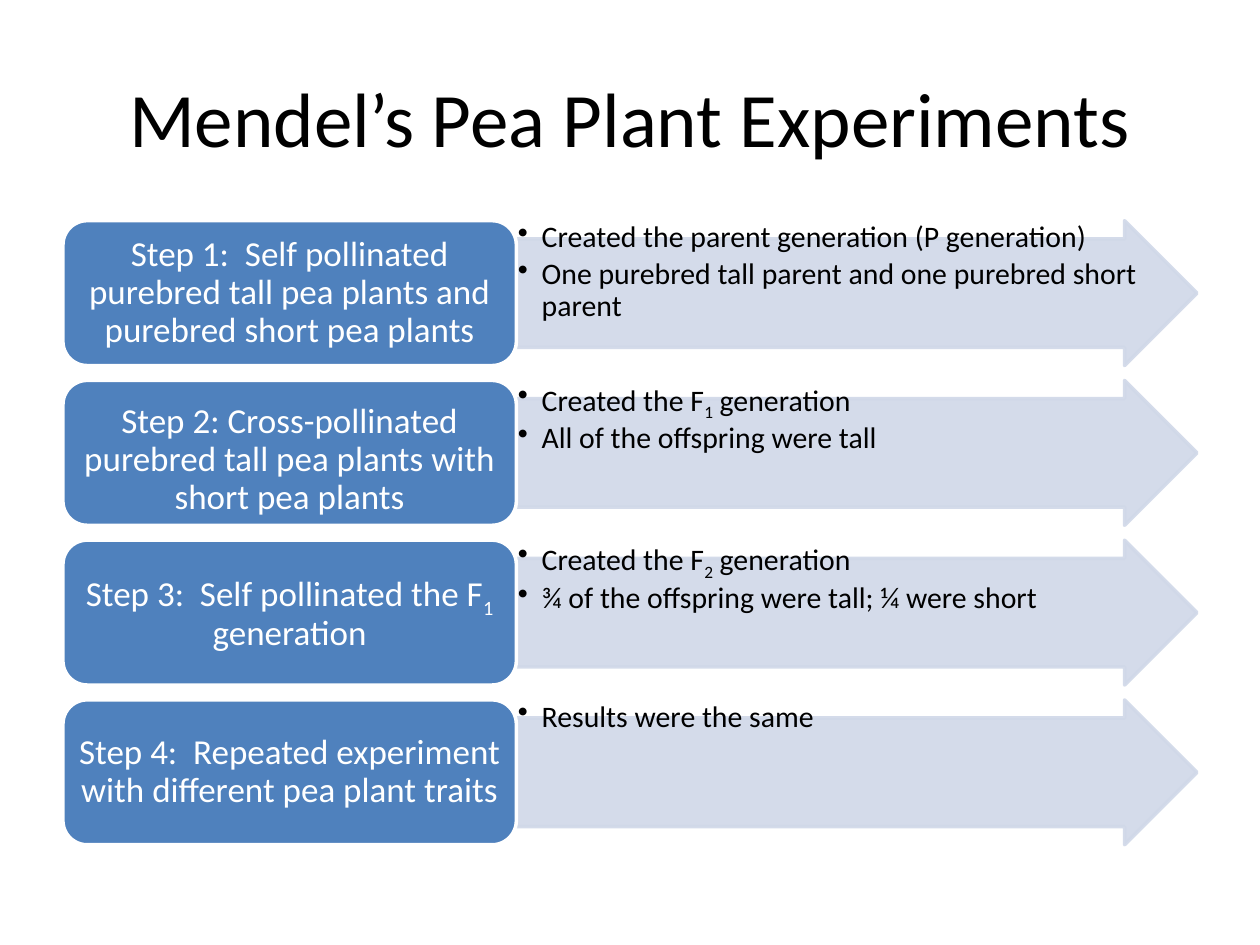
import lxml.etree
import pptx
import pptx.dml.color
import pptx.enum.shapes
import pptx.enum.text
import pptx.oxml.ns
import pptx.util

Cm = pptx.util.Cm
Pt = pptx.util.Pt
qn = pptx.oxml.ns.qn
SHAPE = pptx.enum.shapes.MSO_SHAPE
ALIGN = pptx.enum.text.PP_ALIGN
ANCHOR = pptx.enum.text.MSO_ANCHOR


def paint(target, colour, alpha=None):
    target.solid()
    target.fore_color.rgb = pptx.dml.color.RGBColor.from_string(colour)
    if alpha is not None:
        for element in target._xPr.iter(qn("a:srgbClr")):
            if element.find(qn("a:alpha")) is None:
                lxml.etree.SubElement(element, qn("a:alpha"), val=str(alpha * 1000))


class StepPage:
    font = "Calibri"
    black, white = "000000", "FFFFFF"
    step_fill, arrow_fill = "4F81BD", "D0D8E8"

    def __init__(self, page):
        self.page = page

    def shape(self, kind, place, fill, line, alpha=None):
        shape = self.page.shapes.add_shape(kind, *place)
        shape.shadow.inherit = False
        shape.line.width = Pt(2)
        paint(shape.line.fill, line, alpha)
        paint(shape.fill, fill, alpha)
        return shape

    def put_text(self, frame, texts, size, colour, align, after=0, spacing=1, bullet=False):
        frame.word_wrap = True
        for index, text in enumerate(texts):
            para = frame.paragraphs[0] if index == 0 else frame.add_paragraph()
            if bullet:
                self.bullet(para)
            para.alignment = align
            para.line_spacing = spacing
            para.space_after = Pt(after)
            para.font.name = self.font
            para.font.size = Pt(size)
            paint(para.font.fill, colour)
            for position, part in enumerate(text.split("_")):
                span = para.add_run()
                span.text = part
                if position % 2:
                    span.font._element.set("baseline", "-25000")

    def bullet(self, para):
        properties = para._p.get_or_add_pPr()
        properties.set("marL", str(Cm(0.48)))
        properties.set("indent", str(Cm(-0.48)))
        lxml.etree.SubElement(properties, qn("a:buChar"), char="•")

    def inset(self, frame, side, top, bottom):
        frame.margin_left = frame.margin_right = Cm(side)
        frame.margin_top, frame.margin_bottom = Cm(top), Cm(bottom)

    def title(self, place, text):
        frame = self.page.shapes.add_textbox(*place).text_frame
        frame.vertical_anchor = ANCHOR.MIDDLE
        self.put_text(frame, [text], 44, self.black, ALIGN.CENTER)

    def arrow(self, place):
        arrow = self.shape(SHAPE.RIGHT_ARROW, place, self.arrow_fill, self.arrow_fill, 90)
        arrow.adjustments[0], arrow.adjustments[1] = 0.75, 0.5

    def results(self, place, texts):
        frame = self.page.shapes.add_textbox(*place).text_frame
        self.inset(frame, 0.03, 0.03, 0.03)
        self.put_text(frame, texts, 17, self.black, ALIGN.LEFT, 2.55, 0.9, True)

    def step(self, place, text, drop):
        box = self.shape(SHAPE.ROUNDED_RECTANGLE, place, self.step_fill, self.white)
        frame = box.text_frame
        frame.vertical_anchor = ANCHOR.MIDDLE
        self.inset(frame, 0.06, drop, 0)
        self.put_text(frame, [text], 20, self.white, ALIGN.CENTER, 0, 0.9)


STEPS = [
    ("Step 1:  Self pollinated purebred tall pea plants and purebred short pea plants",
     ["Created the parent generation (P generation)",
      "One purebred tall parent and one purebred short parent"], 0),
    ("Step 2: Cross-pollinated purebred tall pea plants with short pea plants",
     ["Created the F_1_ generation", "All of the offspring were tall"], 0.3),
    ("Step 3:  Self pollinated the F_1_ generation",
     ["Created the F_2_ generation", "¾ of the offspring were tall; ¼ were short"], 0),
    ("Step 4:  Repeated experiment with different pea plant traits",
     ["Results were the same"], 0),
]


def main():
    deck = pptx.Presentation()
    deck.slide_width, deck.slide_height = Cm(25.4), Cm(19.05)
    sheet = StepPage(deck.slides.add_slide(deck.slide_layouts[6]))
    sheet.title((Cm(1.27), Cm(0.76), Cm(22.86), Cm(3.18)), "Mendel’s Pea Plant Experiments")
    left, top, height, pitch = 1.27, 4.45, 2.92, 3.22
    step_width, arrow_width = 9.14, 13.72
    for row, (step, results, drop) in enumerate(STEPS):
        y = Cm(top + row * pitch)
        arrow_place = (Cm(left + step_width), y, Cm(arrow_width), Cm(height))
        sheet.arrow(arrow_place)
        sheet.results(arrow_place, results)
        sheet.step((Cm(left), y, Cm(step_width), Cm(height)), step, drop)
    deck.save("out.pptx")


if __name__ == "__main__":
    main()
